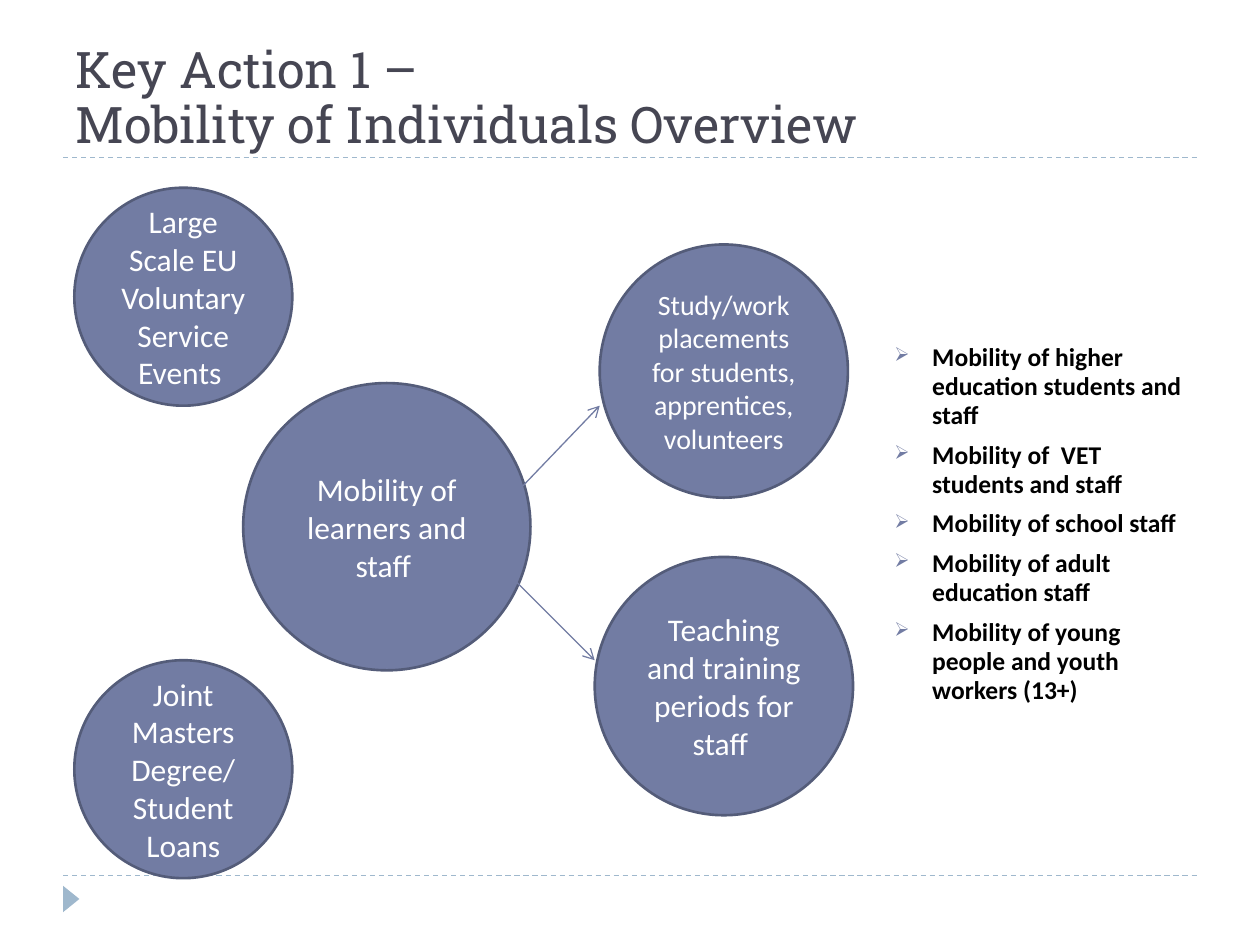
"""Build the Key Action 1 mobility overview slide."""
from dataclasses import dataclass

import lxml.etree
import pptx
import pptx.dml.color
import pptx.enum.dml
import pptx.enum.shapes
import pptx.enum.text
import pptx.oxml.ns
import pptx.util

SHAPES = pptx.enum.shapes.MSO_SHAPE
ANCHORS = pptx.enum.text.MSO_ANCHOR


@dataclass(frozen=True)
class Theme:
    heading_font: str = "Roboto Slab"
    body_font: str = "Calibri"
    heading: str = "464653"
    circle: str = "727CA3"
    outline: str = "545C79"
    rule: str = "9FB8CD"
    light: str = "FFFFFF"
    dark: str = "000000"
    title_size: float = 28.8
    label_size: float = 18
    small_label_size: float = 16
    list_size: float = 14.6


class SlideBuilder:
    """Draws elements on a grid of 100 columns by 75 rows."""

    def __init__(self, deck, theme):
        self.theme = theme
        self.column = deck.slide_width / 100
        self.row = deck.slide_height / 75
        self.slide = deck.slides.add_slide(deck.slide_layouts[5])

    def place(self, left, top, width, height):
        return [round(length * unit) for length, unit in zip(
            (left, top, width, height), (self.column, self.row) * 2)]

    @staticmethod
    def color(value):
        return pptx.dml.color.RGBColor.from_string(value)

    @staticmethod
    def child(parent, tag, **attributes):
        return lxml.etree.SubElement(parent, pptx.oxml.ns.qn(tag), attributes)

    def add_text(self, paragraph, text, size, color, font=None, bold=False):
        run = paragraph.add_run()
        run.text = text
        run.font.size = pptx.util.Pt(size)
        run.font.name = font or self.theme.body_font
        run.font.bold = bold
        run.font.color.rgb = self.color(color)

    def title(self, lines, box):
        heading = self.slide.shapes.title
        heading.left, heading.top, heading.width, heading.height = self.place(*box)
        frame = heading.text_frame
        frame.auto_size = pptx.enum.text.MSO_AUTO_SIZE.NONE
        frame.vertical_anchor = ANCHORS.BOTTOM
        frame.margin_bottom = pptx.util.Inches(0.02)
        paragraph = frame.paragraphs[0]
        paragraph.alignment = pptx.enum.text.PP_ALIGN.LEFT
        paragraph.line_spacing = 0.92
        for index, line in enumerate(lines):
            if index:
                paragraph.add_line_break()
            self.add_text(paragraph, line, self.theme.title_size,
                          self.theme.heading, self.theme.heading_font)

    def shape(self, kind, box, fill, outline=None):
        drawn = self.slide.shapes.add_shape(kind, *self.place(*box))
        drawn.shadow.inherit = False
        drawn.fill.solid()
        drawn.fill.fore_color.rgb = self.color(fill)
        if outline:
            drawn.line.color.rgb = self.color(outline)
            drawn.line.width = pptx.util.Pt(1.5)
        else:
            drawn.line.fill.background()
        return drawn

    def circle(self, text, box, size):
        frame = self.shape(SHAPES.OVAL, box, self.theme.circle,
                           self.theme.outline).text_frame
        frame.word_wrap = True
        frame.vertical_anchor = ANCHORS.MIDDLE
        paragraph = frame.paragraphs[0]
        paragraph.alignment = pptx.enum.text.PP_ALIGN.CENTER
        self.add_text(paragraph, text, size, self.theme.light)

    def line(self, start, end, color):
        drawn = self.slide.shapes.add_connector(
            pptx.enum.shapes.MSO_CONNECTOR.STRAIGHT, *self.place(*start, *end))
        drawn.line.color.rgb = self.color(color)
        drawn.line.width = pptx.util.Pt(0.75)
        self.child(drawn._element.spPr, "a:effectLst")
        return drawn

    def rule(self, row):
        drawn = self.line((5, row), (95, row), self.theme.rule)
        drawn.line.dash_style = pptx.enum.dml.MSO_LINE.DASH

    def arrow(self, start, end):
        drawn = self.line(start, end, self.theme.circle)
        self.child(drawn.line._get_or_add_ln(), "a:tailEnd", type="arrow")

    def marker(self, box):
        self.shape(SHAPES.ISOSCELES_TRIANGLE, box, self.theme.rule).rotation = 90

    def bullets(self, items, box):
        frame = self.slide.shapes.add_textbox(*self.place(*box)).text_frame
        frame.word_wrap = True
        frame.vertical_anchor = ANCHORS.MIDDLE
        frame.margin_bottom = pptx.util.Inches(0.33)
        indent = pptx.util.Inches(0.3)
        for index, item in enumerate(items):
            paragraph = frame.add_paragraph() if index else frame.paragraphs[0]
            paragraph.line_spacing = 0.95
            paragraph.space_before = pptx.util.Pt(6)
            properties = paragraph._p.get_or_add_pPr()
            properties.set("marL", str(indent))
            properties.set("indent", str(-indent))
            tint = self.child(properties, "a:buClr")
            self.child(tint, "a:srgbClr", val=self.theme.circle)
            self.child(properties, "a:buSzPct", val="76000")
            self.child(properties, "a:buChar", char="➢")
            self.add_text(paragraph, item, self.theme.list_size,
                          self.theme.dark, bold=True)


def main():
    deck = pptx.Presentation()
    deck.slide_width = pptx.util.Inches(10)
    deck.slide_height = pptx.util.Inches(7.5)
    theme = Theme()
    page = SlideBuilder(deck, theme)

    for row in (69.5, 12.5):
        page.rule(row)
    page.marker((4.6, 70.7, 2.1, 1.3))
    page.title(("Key Action 1 – ", "Mobility of Individuals Overview"),
               (5, 1.7, 90, 10.8))
    page.bullets((
        "Mobility of higher education students and staff",
        "Mobility of  VET students and staff",
        "Mobility of school staff",
        "Mobility of adult education staff",
        "Mobility of young people and youth workers (13+)",
    ), (70, 23.4, 25.7, 39.2))

    strands = (
        ("Mobility of learners and staff ", (19.3, 30.4, 22.8, 22.8), theme.label_size),
        ("Large Scale EU Voluntary Service Events ",
         (5.9, 14.9, 17.3, 17.3), theme.label_size),
        ("Joint Masters Degree/ Student Loans",
         (5.9, 52.4, 17.3, 17.3), theme.label_size),
        ("Study/work placements for students, apprentices, volunteers",
         (47.6, 19.4, 19.7, 20.1), theme.small_label_size),
        ("Teaching and training periods for staff ",
         (47.2, 44.2, 20.5, 20.5), theme.label_size),
    )
    for label, box, size in strands:
        page.circle(label, box, size)

    page.arrow((40.6, 39.5), (47.6, 32.2))
    page.arrow((39.8, 45), (47.2, 52.4))
    deck.save("out.pptx")


if __name__ == "__main__":
    main()
